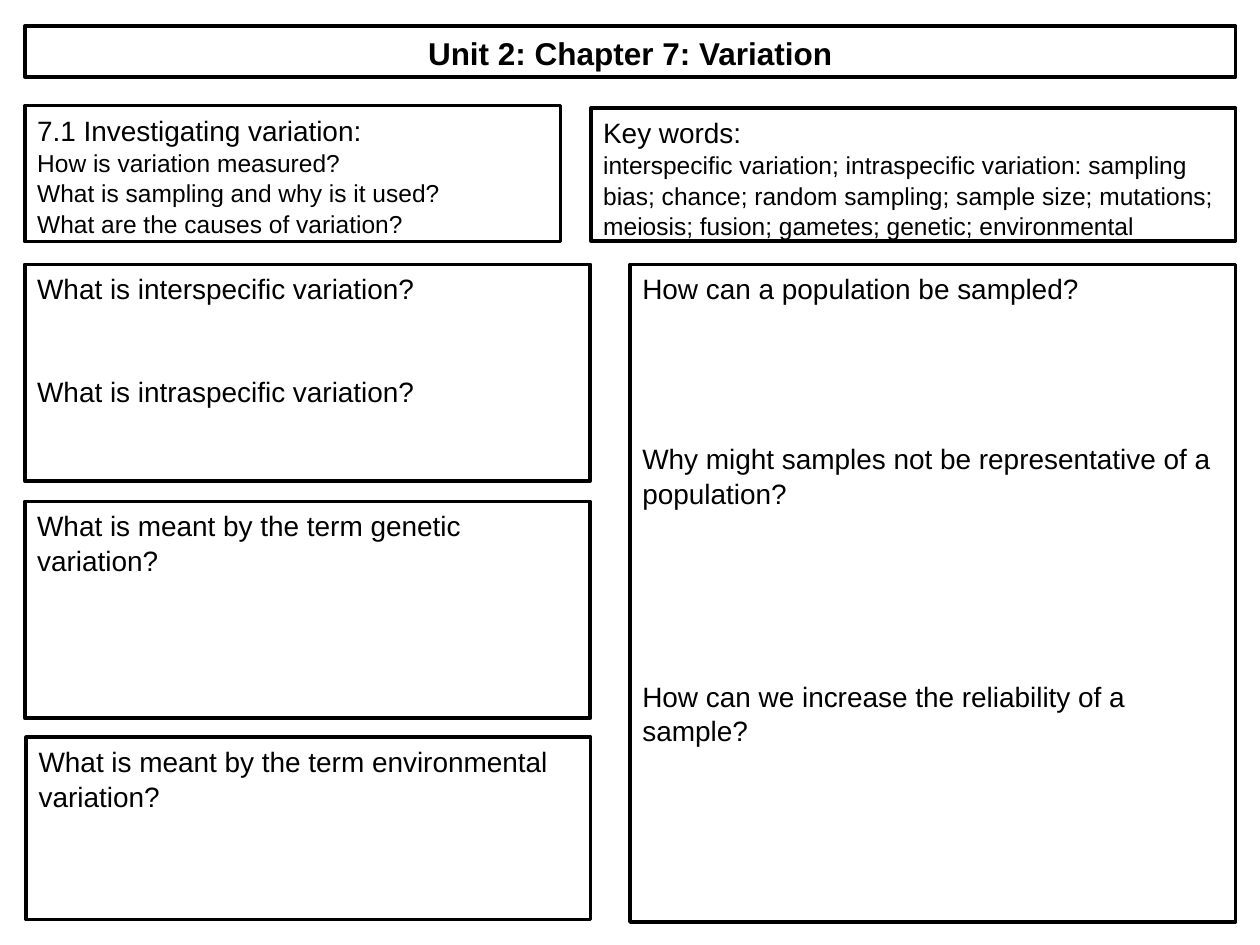
from pptx import Presentation
from pptx.dml.color import RGBColor
from pptx.enum.shapes import MSO_SHAPE as Shape
from pptx.enum.text import MSO_ANCHOR as Anchor, PP_ALIGN as Align
from pptx.util import Cm, Pt

LEFT = 0.5
RIGHT = 24.91
LEFT_COLUMN = 11.4
QUESTIONS_TOP = 5.33
QUESTION_HEIGHT = 4.37
ANSWER_LINE = 19.2


def rgb(value):
    return RGBColor.from_string(value)


def add_text(p, text, font="Arial", size=16, color="000000", bold=False,
             align=Align.LEFT, before=0):
    p.alignment = align
    p.line_spacing = 1.04
    p.space_before = Pt(before)
    r = p.add_run()
    r.text = text
    r.font.name = font
    r.font.size = Pt(size)
    r.font.bold = bold
    r.font.color.rgb = rgb(color)


class Worksheet:
    fill = "FFFFFF"
    ink = "000000"
    line_width = 2

    def __init__(self, s):
        self.s = s

    def box(self, left, top, width, height):
        sp = self.s.shapes.add_shape(
            Shape.RECTANGLE, Cm(left), Cm(top), Cm(width), Cm(height))
        sp.shadow.inherit = False
        sp.fill.solid()
        sp.fill.fore_color.rgb = rgb(self.fill)
        sp.line.color.rgb = rgb(self.ink)
        sp.line.width = Pt(self.line_width)
        tf = sp.text_frame
        tf.word_wrap = True
        tf.vertical_anchor = Anchor.TOP
        return tf

    def title(self, text, *area):
        tf = self.box(*area)
        add_text(tf.paragraphs[0], text, size=18, bold=True, align=Align.CENTER)

    def summary(self, heading, lines, *area):
        tf = self.box(*area)
        add_text(tf.paragraphs[0], heading)
        for line in lines:
            add_text(tf.add_paragraph(), line, size=14)

    def questions(self, first, others, *area):
        tf = self.box(*area)
        add_text(tf.paragraphs[0], first)
        for text, answer_lines in others:
            add_text(tf.add_paragraph(), text, before=answer_lines * ANSWER_LINE)


def main():
    prs = Presentation()
    prs.slide_width, prs.slide_height = Cm(25.4), Cm(19.05)
    sheet = Worksheet(prs.slides.add_slide(prs.slide_layouts[6]))

    sheet.title("Unit 2: Chapter 7: Variation", LEFT, 0.53, RIGHT - LEFT, 1.02)
    sheet.summary(
        "7.1 Investigating variation:",
        ["How is variation measured?",
         "What is sampling and why is it used?",
         "What are the causes of variation?"],
        LEFT, 2.13, 10.8, 2.74)
    sheet.summary(
        "Key words:",
        ["interspecific variation; intraspecific variation: sampling bias; "
         "chance; random sampling; sample size; mutations; meiosis; fusion; "
         "gametes; genetic; environmental"],
        11.91, 2.18, RIGHT - 11.91, 2.68)
    sheet.questions(
        "What is interspecific variation?",
        [("What is intraspecific variation?", 2)],
        LEFT, QUESTIONS_TOP, LEFT_COLUMN, QUESTION_HEIGHT)
    sheet.questions(
        "What is meant by the term genetic variation?", [],
        LEFT, 10.11, LEFT_COLUMN, QUESTION_HEIGHT)
    sheet.questions(
        "How can a population be sampled?",
        [("Why might samples not be representative of a population?", 4),
         ("How can we increase the reliability of a sample?", 5)],
        12.7, QUESTIONS_TOP, RIGHT - 12.7, 13.26)
    sheet.questions(
        "What is meant by the term environmental variation?", [],
        0.53, 14.86, 11.38, 3.68)

    prs.save("out.pptx")


if __name__ == "__main__":
    main()
